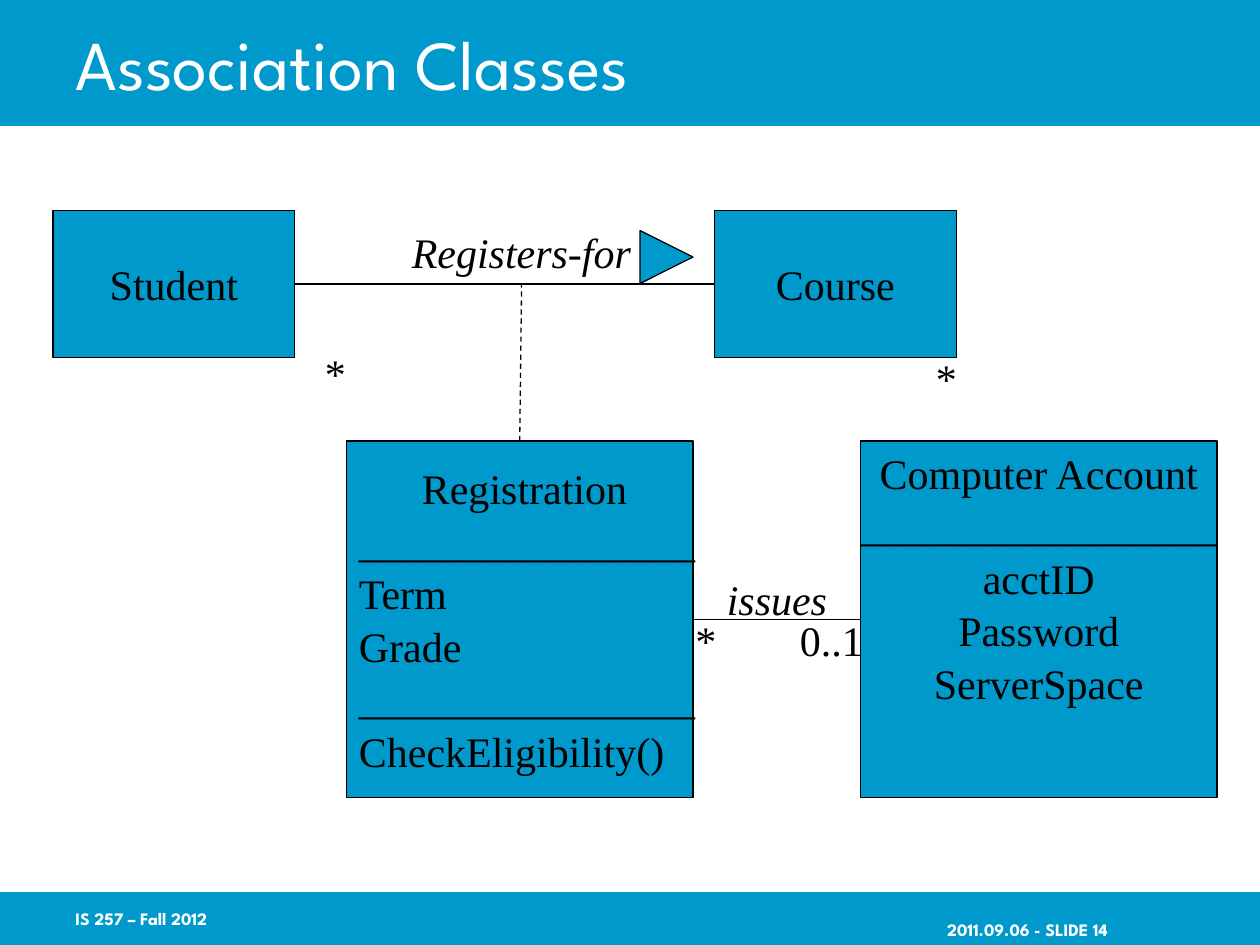
from lxml import etree
from pptx import Presentation
from pptx.dml.color import RGBColor
from pptx.enum.dml import MSO_LINE
from pptx.enum.shapes import MSO_CONNECTOR, MSO_SHAPE
from pptx.enum.text import MSO_ANCHOR, MSO_AUTO_SIZE, PP_ALIGN
from pptx.oxml.ns import qn
from pptx.util import Inches, Pt

BLUE = RGBColor(0x00, 0x99, 0xCC)
BLACK = RGBColor(0x00, 0x00, 0x00)
WHITE = RGBColor(0xFF, 0xFF, 0xFF)
RECTANGLE, TRIANGLE = MSO_SHAPE.RECTANGLE, MSO_SHAPE.ISOSCELES_TRIANGLE
STRAIGHT, DASH = MSO_CONNECTOR.STRAIGHT, MSO_LINE.DASH
LEFT, CENTER, RIGHT = PP_ALIGN.LEFT, PP_ALIGN.CENTER, PP_ALIGN.RIGHT
TOP, MIDDLE = MSO_ANCHOR.TOP, MSO_ANCHOR.MIDDLE
TOP_SIDE, LEFT_SIDE, RIGHT_SIDE = 0, 1, 3


class ClassDiagram:
    heading_font = "League Spartan"
    body_font = "Times New Roman"
    line_width = Pt(0.75)

    def __init__(self, slide):
        self.slide = slide
        self.shapes = slide.shapes

    def add_lines(self, frame, lines, size=24, font=body_font, color=BLACK,
                  align=LEFT, bold=False, italic=False):
        for i, line in enumerate(lines):
            paragraph = frame.paragraphs[0] if i == 0 else frame.add_paragraph()
            paragraph.alignment = align
            if i:
                paragraph.space_before = Pt(1.2)
            run = paragraph.add_run()
            run.text = line
            run.font.name, run.font.size = font, Pt(size)
            run.font.color.rgb = color
            run.font.bold, run.font.italic = bold, italic

    def block(self, x, y, w, h, kind=RECTANGLE, outlined=True):
        shape = self.shapes.add_shape(kind, Inches(x), Inches(y), Inches(w), Inches(h))
        shape.shadow.inherit = False
        shape.fill.solid()
        shape.fill.fore_color.rgb = BLUE
        if outlined:
            shape.line.color.rgb = BLACK
            shape.line.width = self.line_width
        else:
            shape.line.fill.background()
        return shape

    def class_box(self, x, y, w, h, lines, align=CENTER, anchor=MIDDLE):
        box = self.block(x, y, w, h)
        frame = box.text_frame
        frame.word_wrap = False
        frame.vertical_anchor = anchor
        self.add_lines(frame, lines, align=align)
        return box

    def label(self, x, y, w, text, italic=False):
        box = self.shapes.add_textbox(Inches(x), Inches(y), Inches(w), Inches(0.5))
        box.text_frame.word_wrap = False
        box.text_frame.auto_size = MSO_AUTO_SIZE.SHAPE_TO_FIT_TEXT
        self.add_lines(box.text_frame, [text], italic=italic)

    def connector(self, x1, y1, x2, y2, dash=None):
        line = self.shapes.add_connector(
            STRAIGHT, Inches(x1), Inches(y1), Inches(x2), Inches(y2))
        line.line.color.rgb = BLACK
        line.line.width = self.line_width
        if dash:
            line.line.dash_style = dash
        etree.SubElement(line._element.spPr, qn("a:effectLst"))
        return line

    def association(self, source, target):
        line = self.connector(0, 0, 1, 1)
        line.begin_connect(source, RIGHT_SIDE)
        line.end_connect(target, LEFT_SIDE)

    def footer(self, x, text, align=LEFT):
        box = self.shapes.add_textbox(Inches(x), Inches(7.08), Inches(2.08), Inches(0.42))
        frame = box.text_frame
        frame.word_wrap = True
        frame.vertical_anchor = MIDDLE
        frame.margin_right = 0
        self.add_lines(frame, [text], 10, self.heading_font, WHITE, align, bold=True)
        return frame

    def title(self, text):
        title = self.shapes.title
        title.left, title.top = Inches(0.5), Inches(0)
        title.width, title.height = Inches(8.5), Inches(1)
        title.text_frame.vertical_anchor = MIDDLE
        self.add_lines(title.text_frame, [text], 40, self.heading_font, WHITE)
        # Bring the title in front of the header band
        self.shapes._spTree.append(title._element)


def main():
    prs = Presentation()
    prs.slide_width, prs.slide_height = Inches(10), Inches(7.5)
    diagram = ClassDiagram(prs.slides.add_slide(prs.slide_layouts[5]))

    # Header and footer bands
    diagram.block(0, 0, 10, 1, outlined=False)
    diagram.block(0, 7.08, 10, 0.42, outlined=False)
    slide_number = diagram.footer(7.42, "2011.09.06 - SLIDE 14", RIGHT)
    slide_number.margin_left, slide_number.margin_right = 0, Inches(0.71)
    slide_number.margin_top = Inches(0.22)
    diagram.footer(0.5, "IS 257 – Fall 2012")
    diagram.title("Association Classes")

    # Student registers for course
    student = diagram.class_box(0.42, 1.67, 1.92, 1.17, ["Student"])
    course = diagram.class_box(5.67, 1.67, 1.92, 1.17, ["Course"])
    diagram.association(student, course)
    diagram.label(3.17, 1.75, 1.94, "Registers-for", italic=True)
    direction = diagram.block(5.08, 1.83, 0.42, 0.42, TRIANGLE)
    direction.rotation = 90
    diagram.label(2.48, 2.71, 0.37, "*")
    diagram.label(7.33, 2.75, 0.37, "*")

    # Association class
    registration = diagram.class_box(
        2.75, 3.5, 2.75, 2.83,
        ["Registration", "_" * 16, "Term", "Grade", "_" * 16, "CheckEligibility()"],
        align=LEFT)
    name = registration.text_frame.paragraphs[0]
    name._p.get_or_add_pPr().set("marL", str(Inches(0.5)))
    link = diagram.connector(4.12, 3.5, 4.14, 2.25, DASH)
    link.begin_connect(registration, TOP_SIDE)

    # Registration issues computer account
    account = diagram.class_box(
        6.83, 3.5, 2.83, 2.83,
        ["Computer Account", "_" * 17, "acctID", "Password", "ServerSpace"],
        anchor=TOP)
    diagram.association(registration, account)
    diagram.label(5.42, 4.83, 0.37, "*")
    diagram.label(6.25, 4.83, 0.7, "0..1")
    diagram.label(5.67, 4.5, 1, "issues", italic=True)

    prs.save("out.pptx")


if __name__ == "__main__":
    main()
